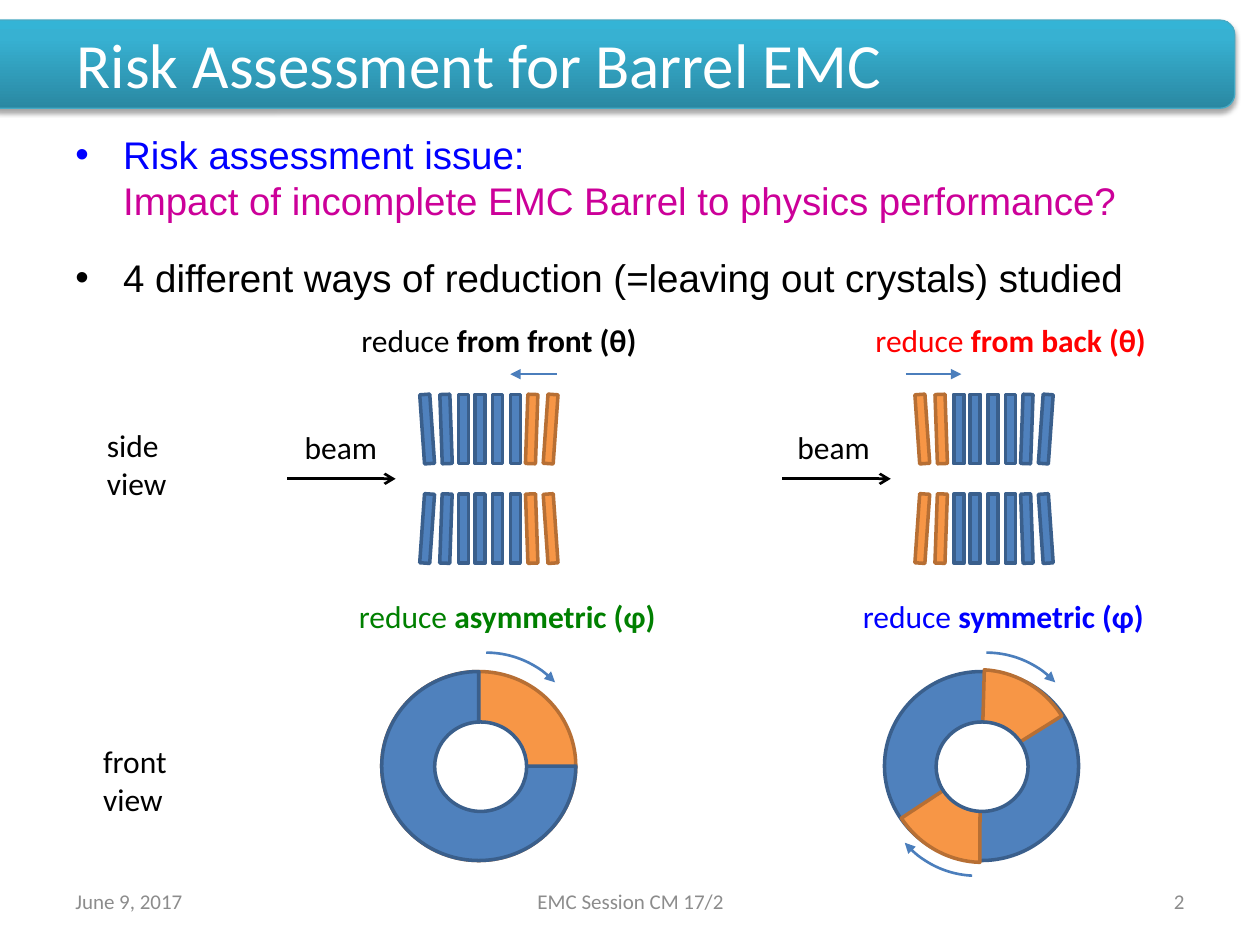
from typing import NamedTuple

from lxml import etree
from pptx import Presentation
from pptx.dml.color import RGBColor
from pptx.enum.shapes import MSO_CONNECTOR, MSO_SHAPE
from pptx.enum.text import MSO_ANCHOR, PP_ALIGN
from pptx.oxml import parse_xml
from pptx.oxml.ns import nsdecls, qn
from pptx.util import Inches, Pt

RECT, ROUND, OVAL = MSO_SHAPE.RECTANGLE, MSO_SHAPE.ROUNDED_RECTANGLE, MSO_SHAPE.OVAL
PIE, ARC = MSO_SHAPE.PIE, MSO_SHAPE.ARC
STRAIGHT = MSO_CONNECTOR.STRAIGHT
LEFT, CENTER, RIGHT = PP_ALIGN.LEFT, PP_ALIGN.CENTER, PP_ALIGN.RIGHT
TOP, MIDDLE = MSO_ANCHOR.TOP, MSO_ANCHOR.MIDDLE

COLORS = {
    "white": "FFFFFF", "black": "000000", "gray": "8C8C8C", "blue": "0000FF",
    "pink": "CC0099", "red": "FF0000", "green": "008000", "arrow": "4B7EBC",
    "kept": "4F81BD", "kept_edge": "3A5F8C", "cut": "F79646", "cut_edge": "B76F34",
    "band_edge": "46AAC5",
}
BAND = [(0, "2A88A2"), (80, "37B1D2"), (100, "34B4D6")]

BAR_X = [0, 0.15, 0.29, 0.42, 0.56, 0.7, 0.83, 0.98]
TILTS = [-4, -2, 0, 0, 0, 0, 2, 4]
WEDGE = (128.19, 162)
SWEEP = (162, 190.03)


class Box(NamedTuple):
    x: float
    y: float
    w: float
    h: float


class Label(NamedTuple):
    x: float
    y: float
    w: float
    h: float
    text: str
    bold: str = ""
    color: str = "black"


class Side(NamedTuple):
    """A side view: left edge, beam label place and the cut bars."""
    x: float
    beam: float
    cut: tuple


class Foot(NamedTuple):
    box: Box
    text: str
    align: PP_ALIGN


LABELS = [
    Label(2.77, 2.5, 2.41, 0.4, "reduce ", "from front (θ)"),
    Label(6.85, 2.5, 2.37, 0.4, "reduce ", "from back (θ)", "red"),
    Label(2.75, 4.69, 2.58, 0.4, "reduce ", "asymmetric (φ)", "green"),
    Label(6.75, 4.69, 2.46, 0.4, "reduce ", "symmetric (φ)", "blue"),
    Label(0.75, 3.33, 0.68, 0.71, "side\nview"),
    Label(0.72, 5.84, 0.71, 0.71, "front\nview"),
]
SIDES = [Side(3.35, 2.32, (6, 7)), Side(7.28, 6.23, (0, 1))]
FEET = [
    Foot(Box(0.5, 6.95, 2.33, 0.4), "June 9, 2017", LEFT),
    Foot(Box(3.42, 6.95, 3.17, 0.4), "EMC Session CM 17/2", CENTER),
    Foot(Box(7.17, 6.95, 2.33, 0.4), "2", RIGHT),
]


def rgb(name: str) -> RGBColor:
    return RGBColor.from_string(COLORS[name])


def style(font, size: float, color: str, face: str = "Calibri") -> None:
    font.size, font.name = Pt(size), face
    font.color.rgb = rgb(color)


def add_text(slide, box: Box, text: str, size: float, color: str = "black",
             align=LEFT, anchor=TOP, wrap: bool = True):
    frame = slide.shapes.add_textbox(*map(Inches, box)).text_frame
    frame.word_wrap, frame.vertical_anchor = wrap, anchor
    frame.text = text
    for para in frame.paragraphs:
        para.alignment = align
        for run in para.runs:
            style(run.font, size, color)
    return frame


def add_label(slide, item: Label) -> None:
    frame = add_text(slide, Box(*item[:4]), item.text, 18, item.color, wrap=False)
    if item.bold:
        run = frame.paragraphs[0].add_run()
        run.text = item.bold
        style(run.font, 18, item.color)
        run.font.bold = True


def add_shape(slide, kind, box: Box, fill: str, edge: str,
              turn: float = 0, adjust: tuple = ()):
    """Draw a preset shape; an empty fill name leaves it open."""
    shape = slide.shapes.add_shape(kind, *map(Inches, box))
    shape.shadow.inherit = False
    shape.rotation = turn
    for i, value in enumerate(adjust):
        shape.adjustments[i] = value
    if fill:
        shape.fill.solid()
        shape.fill.fore_color.rgb = rgb(fill)
    else:
        shape.fill.background()
    shape.line.color.rgb = rgb(edge)
    shape.line.width = Pt(2)
    return shape


def add_part(slide, kind, box: Box, state: str, turn: float = 0, adjust: tuple = ()):
    return add_shape(slide, kind, box, state, state + "_edge", turn, adjust)


def add_head(shape, kind: str) -> None:
    shape.line.width = Pt(1.5)
    line = shape.element.spPr.find(qn("a:ln"))
    etree.SubElement(line, qn("a:tailEnd"), type=kind)


def add_arrow(slide, start: float, end: float, y: float, color: str, head: str) -> None:
    line = slide.shapes.add_connector(
        STRAIGHT, Inches(start), Inches(y), Inches(end), Inches(y))
    line.line.color.rgb = rgb(color)
    add_head(line, head)
    etree.SubElement(line.element.spPr, qn("a:effectLst"))


def add_arc(slide, x: float, y: float, turn: float = 0) -> None:
    arc = add_shape(slide, ARC, Box(x, y, 1.5, 1.5), "", "arrow", turn, SWEEP)
    add_head(arc, "triangle")


def add_band(slide) -> None:
    """Draw the title band with its gradient and soft shadow."""
    band = add_shape(slide, ROUND, Box(-0.12, 0.16, 9.92, 0.7), "", "band_edge")
    band.line.width = Pt(0.75)
    props = band.element.spPr
    stops = "".join(f'<a:gs pos="{pos * 1000}"><a:srgbClr val="{color}"/></a:gs>'
                    for pos, color in BAND)
    props.replace(props.find(qn("a:noFill")), parse_xml(
        f'<a:gradFill {nsdecls("a")} rotWithShape="1"><a:gsLst>{stops}</a:gsLst>'
        '<a:lin ang="16200000" scaled="0"/></a:gradFill>'))
    props.find(qn("a:effectLst")).append(parse_xml(
        f'<a:outerShdw {nsdecls("a")} blurRad="40000" dist="23000" dir="5400000" '
        'rotWithShape="0"><a:srgbClr val="000000"><a:alpha val="35000"/>'
        '</a:srgbClr></a:outerShdw>'))


def add_body(slide) -> None:
    frame = add_text(slide, Box(0.5, 0.99, 9, 1.5), "Risk assessment issue: \v"
                     "Impact of incomplete EMC Barrel to physics performance?\n"
                     "4 different ways of reduction (=leaving out crystals) studied", 22)
    issue, ways = frame.paragraphs
    for para in (issue, ways):
        props = para._p.get_or_add_pPr()
        props.set("marL", str(Inches(0.38)))
        props.set("indent", str(-Inches(0.38)))
        etree.SubElement(props, qn("a:buFont"), typeface="Arial")
        etree.SubElement(props, qn("a:buChar"), char="•")
    ways.line_spacing, ways.space_before = 1.5, Pt(4.4)
    runs = issue.runs + ways.runs
    for run, color in zip(runs, ("blue", "pink", "black")):
        style(run.font, 22, color, "Arial")


def add_side(slide, side: Side) -> None:
    for y, sign in ((3.13, 1), (3.92, -1)):
        for i, (step, tilt) in enumerate(zip(BAR_X, TILTS)):
            state = "cut" if i in side.cut else "kept"
            add_part(slide, RECT, Box(side.x + step, y, 0.08, 0.55), state, sign * tilt)
    add_arrow(slide, side.x - 1.07, side.x - 0.21, 3.8, "black", "arrow")
    add_text(slide, Box(side.beam, 3.35, 0.78, 0.4), "beam", 18, wrap=False)


def add_rings(slide) -> None:
    left, right = Box(3.03, 5.33, 1.54, 1.5), Box(7.02, 5.33, 1.54, 1.5)
    add_part(slide, OVAL, left, "cut")
    add_part(slide, PIE, left, "kept", adjust=(0, 162))
    add_part(slide, OVAL, right, "kept")
    add_part(slide, PIE, right._replace(x=7.01), "cut", 236.6, WEDGE)
    add_part(slide, PIE, right, "cut", 58, WEDGE)
    for x in (3.45, 7.43):
        add_shape(slide, OVAL, Box(x, 5.73, 0.73, 0.71), "white", "kept_edge")
    add_arc(slide, 3.11, 5.18)
    add_arc(slide, 7.08, 5.18)
    add_arc(slide, 7, 5.45, 182.7)


def main() -> None:
    deck = Presentation()
    deck.slide_width, deck.slide_height = Inches(10), Inches(7.5)
    slide = deck.slides.add_slide(deck.slide_layouts[6])
    add_band(slide)
    add_text(slide, Box(0.51, 0.23, 8.99, 0.54), "Risk Assessment for Barrel EMC",
             36, "white", anchor=MIDDLE)
    add_body(slide)
    for foot in FEET:
        add_text(slide, foot.box, foot.text, 12, "gray", foot.align, MIDDLE)
    for side in SIDES:
        add_side(slide, side)
    add_arrow(slide, 4.42, 4.05, 2.97, "arrow", "triangle")
    add_arrow(slide, 7.19, 7.63, 2.97, "arrow", "triangle")
    add_rings(slide)
    for item in LABELS:
        add_label(slide, item)
    deck.save("out.pptx")


if __name__ == "__main__":
    main()
